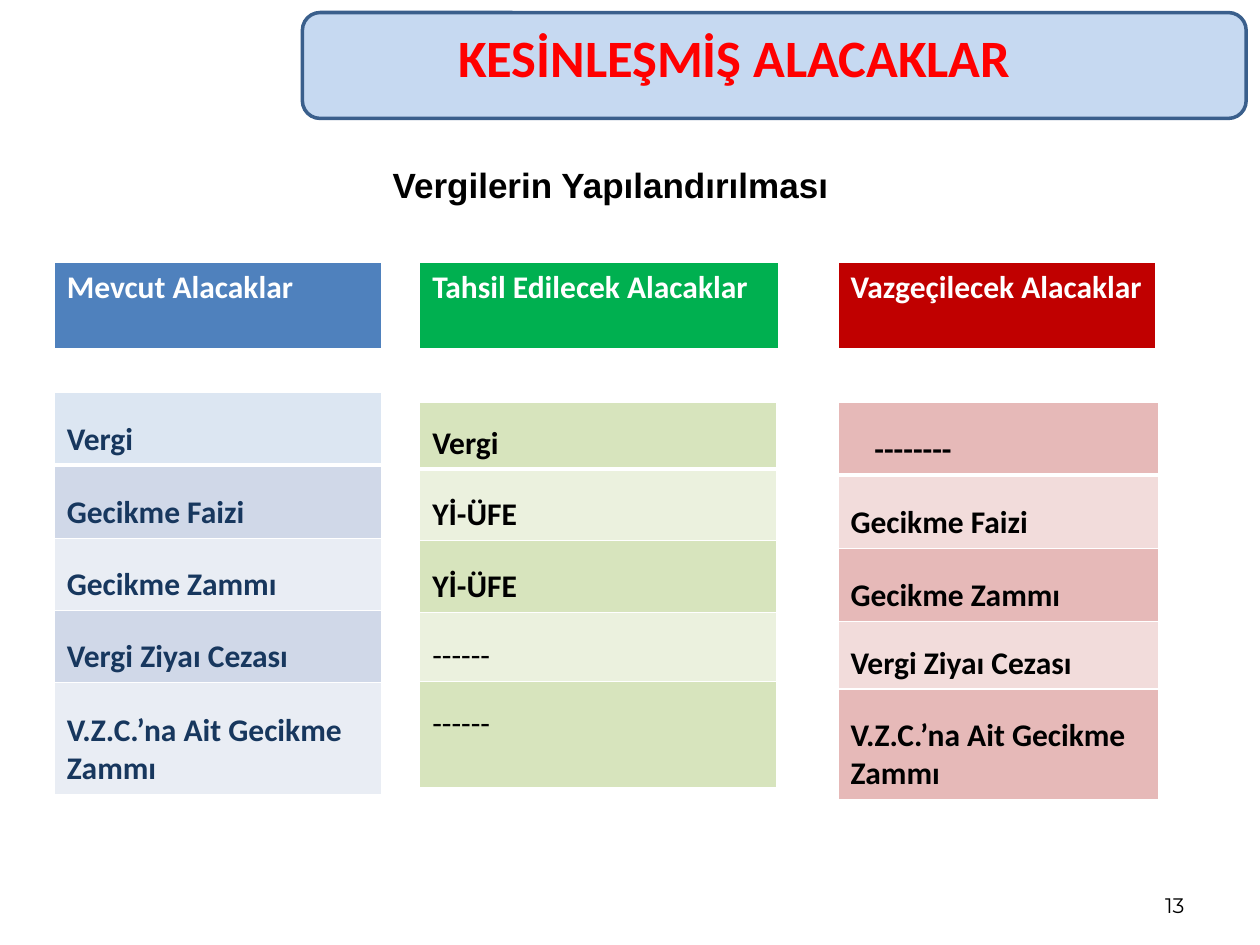
import pptx
import pptx.dml.color
import pptx.enum.shapes
import pptx.enum.text
import pptx.oxml.ns
import pptx.util
from lxml import etree

Pt = pptx.util.Pt
RGB = pptx.dml.color.RGBColor
ALIGN = pptx.enum.text.PP_ALIGN
ANCHOR = pptx.enum.text.MSO_ANCHOR
qn = pptx.oxml.ns.qn

WHITE, BLACK = RGB(255, 255, 255), RGB(0, 0, 0)
RED, NAVY = RGB(0xFF, 0, 0), RGB(0x17, 0x37, 0x5E)
BANNER_FILL, BANNER_LINE = RGB(0xC6, 0xD9, 0xF1), RGB(0x3A, 0x5F, 0x8C)
BLUE, GREEN, DARK_RED = RGB(0x4F, 0x81, 0xBD), RGB(0, 0xB0, 0x50), RGB(0xC0, 0, 0)
BLUE_FIRST = RGB(0xDC, 0xE6, 0xF2)
BLUE_BANDS = RGB(0xE9, 0xED, 0xF4), RGB(0xD0, 0xD8, 0xE8)
GREEN_BANDS = RGB(0xD7, 0xE4, 0xBD), RGB(0xEB, 0xF1, 0xDE)
RED_BANDS = RGB(0xE6, 0xB9, 0xB8), RGB(0xF2, 0xDC, 0xDB)

SIDE, EDGE, LINE_HEIGHT = 7.2, 3.6, 22  # cell margins and one 18 pt line
THIN, THICK = 1, 3


class Deck:
    """Holds the text style and the slide being built."""

    font = "Calibri"
    table_size = 18

    def __init__(self):
        self.file = pptx.Presentation()
        self.file.slide_width, self.file.slide_height = Pt(720), Pt(540)
        self.slide = self.file.slides.add_slide(self.file.slide_layouts[6])

    def format_text(self, paragraph, size, color, bold=True, font=None):
        for run in paragraph.runs:
            run.font.name = font or self.font
            run.font.size = Pt(size)
            run.font.bold = bold
            run.font.color.rgb = color

    def panel(self, left, top, width, height, fill, line):
        panel = self.slide.shapes.add_shape(
            pptx.enum.shapes.MSO_SHAPE.ROUNDED_RECTANGLE,
            Pt(left), Pt(top), Pt(width), Pt(height))
        panel.shadow.inherit = False
        panel.fill.solid()
        panel.fill.fore_color.rgb = fill
        panel.line.color.rgb = line
        panel.line.width = Pt(2)

    def text(self, words, left, top, width, height, size, color, bold=True,
             font=None, align=ALIGN.CENTER, anchor=ANCHOR.TOP, wrap=True, indent=0):
        frame = self.slide.shapes.add_textbox(
            Pt(left), Pt(top), Pt(width), Pt(height)).text_frame
        frame.word_wrap = wrap
        frame.vertical_anchor = anchor
        frame.text = words
        paragraph = frame.paragraphs[0]
        paragraph.alignment = align
        if indent:
            paragraph._p.get_or_add_pPr().set("marL", str(Pt(indent)))
        self.format_text(paragraph, size, color, bold, font)

    def borders(self, cell, top, bottom):
        properties = cell._tc.get_or_add_tcPr()
        widths = {"lnL": THIN, "lnR": THIN, "lnT": top, "lnB": bottom}
        for place, (tag, width) in enumerate(widths.items()):
            line = etree.Element(qn("a:" + tag), w=str(Pt(width)))
            fill = etree.SubElement(line, qn("a:solidFill"))
            etree.SubElement(fill, qn("a:srgbClr"), val=str(WHITE))
            properties.insert(place, line)

    def table(self, left, top, width, rows, color):
        """Each row is (words, height, fill, space above, indent, bold)."""
        total = sum(row[1] for row in rows)
        table = self.slide.shapes.add_table(
            len(rows), 1, Pt(left), Pt(top), Pt(width), Pt(total)).table
        table.columns[0].width = Pt(width)
        for index, (words, height, fill, above, indent, bold) in enumerate(rows):
            table.rows[index].height = Pt(height)
            cell = table.cell(index, 0)
            cell.fill.solid()
            cell.fill.fore_color.rgb = fill
            cell.margin_left, cell.margin_right = Pt(SIDE + indent), Pt(SIDE)
            cell.margin_top, cell.margin_bottom = Pt(EDGE + above), Pt(EDGE)
            cell.text_frame.text = words
            self.format_text(cell.text_frame.paragraphs[0], self.table_size, color, bold)
            self.borders(cell, THICK if index == 1 else THIN,
                         THICK if index == 0 else THIN)


def body_rows(entries, bands, first_fill=None):
    """Entries are (words, gap size); the last row has room for two lines."""
    rows = []
    for index, (words, gap) in enumerate(entries):
        above = round(1.15 * gap, 2)
        lines = 2 if index == len(entries) - 1 else 1
        dashes = not words.strip("-")
        rows.append((
            words, 2 * EDGE + above + lines * LINE_HEIGHT,
            first_fill if first_fill and index == 0 else bands[index % 2],
            above,
            13.7 if dashes and index == 0 else 0,
            not dashes or index == 0))
    return rows


def main():
    deck = Deck()

    # Banner, title and page number
    deck.panel(172.8, 7.2, 539.3, 60.5, BANNER_FILL, BANNER_LINE)
    deck.text("13", 516.2, 491.8, 167.8, 36, 12, BLACK, bold=False,
              font="Montserrat", align=ALIGN.RIGHT, anchor=ANCHOR.BOTTOM)
    deck.text("KESİNLEŞMİŞ ALACAKLAR", 248.4, 10.8, 342.7, 43.9, 30, RED, wrap=False)

    # Three columns: heading, heading width, heading fill, left, body top, body width
    penalty, penalty_delay = "Vergi Ziyaı Cezası", "V.Z.C.’na Ait Gecikme Zammı"
    interest, delay = "Gecikme Faizi", "Gecikme Zammı"
    existing = body_rows([("Vergi", 11), (interest, 11), (delay, 10.5),
                          (penalty, 10.5), (penalty_delay, 11)], BLUE_BANDS, BLUE_FIRST)
    collected = body_rows([("Vergi", 8), ("Yİ-ÜFE", 10), ("Yİ-ÜFE", 10.5),
                           ("------", 9), ("------", 8)], GREEN_BANDS)
    waived = body_rows([("--------", 11), (interest, 11), (delay, 11),
                        (penalty, 8), (penalty_delay, 10.5)], RED_BANDS)
    columns = [
        ("Mevcut Alacaklar", 187.2, BLUE, 31, 223.9, 187.2, existing, NAVY),
        ("Tahsil Edilecek Alacaklar", 205.2, GREEN, 239.8, 229.7, 203.8, collected, BLACK),
        ("Vazgeçilecek Alacaklar", 181.4, DARK_RED, 478.8, 229.7, 183.6, waived, BLACK),
    ]
    for heading, heading_width, fill, left, top, width, rows, color in columns:
        deck.table(left, top, width, rows, color)
        deck.table(left, 149.8, heading_width, [(heading, 50.4, fill, 0, 0, True)], WHITE)

    # Subtitle
    deck.text("Vergilerin Yapılandırılması", 59.8, 90, 572.4, 31.7, 20, BLACK,
              font="Arial", indent=5.8)

    deck.file.save("out.pptx")


if __name__ == "__main__":
    main()
